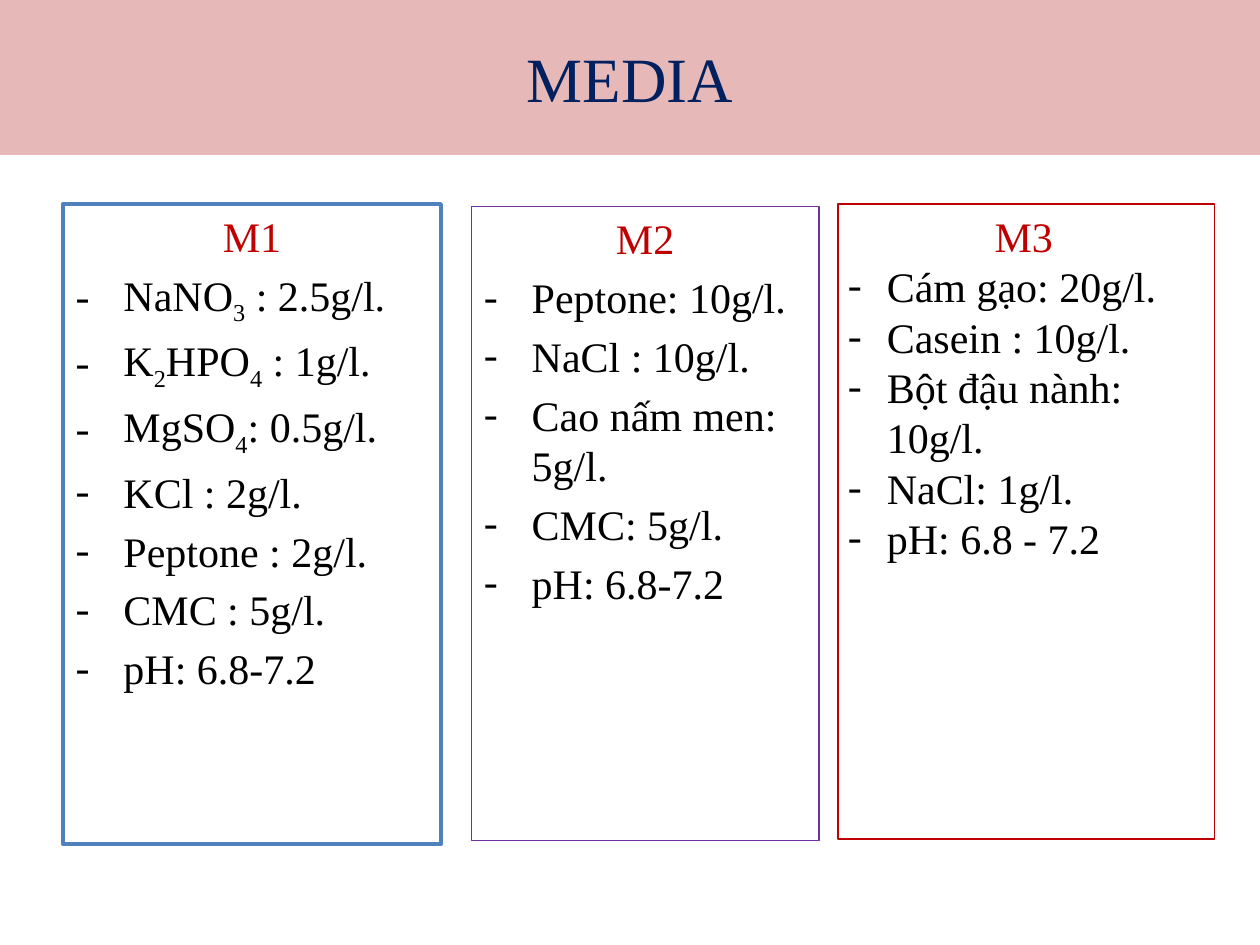
from lxml.etree import SubElement
from pptx import Presentation
from pptx.dml.color import RGBColor
from pptx.enum.shapes import MSO_SHAPE
from pptx.enum.text import MSO_ANCHOR, MSO_AUTO_SIZE, PP_ALIGN
from pptx.oxml.ns import qn
from pptx.util import Inches, Pt

FONT = "Times New Roman"
RED = "C00000"
BLACK = "000000"

# Text between underscores is subscript
M1 = ["NaNO_3_ : 2.5g/l.", "K_2_HPO_4_ : 1g/l.", "MgSO_4_: 0.5g/l.",
      "KCl : 2g/l.", "Peptone : 2g/l.", "CMC : 5g/l.", "pH: 6.8-7.2"]
M2 = ["Peptone: 10g/l.", "NaCl : 10g/l.", "Cao nấm men: 5g/l.",
      "CMC: 5g/l.", "pH: 6.8-7.2"]
M3 = ["Cám gạo: 20g/l.", "Casein : 10g/l.", "Bột đậu nành: 10g/l.",
      "NaCl: 1g/l.", "pH: 6.8 - 7.2"]


def color(hex_code):
    return RGBColor.from_string(hex_code)


def place(shape, left, top, width, height):
    shape.left, shape.top = Inches(left), Inches(top)
    shape.width, shape.height = Inches(width), Inches(height)


def outline(shape, hex_code, points):
    shape.line.color.rgb = color(hex_code)
    shape.line.width = Pt(points)


def add_runs(paragraph, text, size, hex_code):
    for position, part in enumerate(text.split("_")):
        run = paragraph.add_run()
        run.text = part
        run.font.name = FONT
        run.font.size = Pt(size)
        run.font.color.rgb = color(hex_code)
        if position % 2:
            run._r.get_or_add_rPr().set("baseline", "-25000")


def set_bullet(paragraph, indent, mark=None):
    properties = paragraph._p.get_or_add_pPr()
    properties.set("marL", str(Inches(indent)))
    properties.set("indent", str(-Inches(indent)))
    if mark:
        SubElement(properties, qn("a:buFont"), typeface=FONT)
        SubElement(properties, qn("a:buChar"), char=mark)
    else:
        SubElement(properties, qn("a:buNone"))


def fill_medium(frame, name, ingredients, indent, gap):
    frame.word_wrap = True
    frame.auto_size = MSO_AUTO_SIZE.NONE
    frame.vertical_anchor = MSO_ANCHOR.TOP
    heading = frame.paragraphs[0]
    set_bullet(heading, indent)
    heading.alignment = PP_ALIGN.CENTER
    heading.space_before = Pt(0)
    add_runs(heading, name, 24, RED)
    for ingredient in ingredients:
        line = frame.add_paragraph()
        set_bullet(line, indent, "-")
        line.alignment = PP_ALIGN.LEFT
        line.space_before = Pt(gap)
        add_runs(line, ingredient, 24, BLACK)


def add_title(slide, text):
    title = slide.shapes.title
    place(title, 0, 0, 10, 1.23)
    title.fill.solid()
    title.fill.fore_color.rgb = color("E6B9B8")
    title.text_frame.vertical_anchor = MSO_ANCHOR.MIDDLE
    heading = title.text_frame.paragraphs[0]
    heading.alignment = PP_ALIGN.CENTER
    add_runs(heading, text, 36, "002060")


def add_frame(slide, box, hex_code, points):
    frame = slide.shapes.add_shape(MSO_SHAPE.RECTANGLE, *map(Inches, box))
    frame.shadow.inherit = False
    frame.fill.background()
    outline(frame, hex_code, points)


def main():
    deck = Presentation()
    deck.slide_width, deck.slide_height = Inches(10), Inches(7.5)
    slide = deck.slides.add_slide(deck.slide_layouts[3])
    add_title(slide, "MEDIA")

    # First two media in the body placeholders
    columns = [
        (1, "M1", M1, (0.5, 1.62, 3, 5.08), "4F81BD", 2.25),
        (2, "M2", M2, (3.74, 1.64, 2.76, 5.03), "7030A0", 0.75),
    ]
    for index, name, ingredients, box, border, points in columns:
        medium = slide.placeholders[index]
        place(medium, *box)
        outline(medium, border, points)
        fill_medium(medium.text_frame, name, ingredients, 0.38, 4.8)

    # Third medium: text over its own frame
    add_frame(slide, (6.65, 1.62, 2.99, 5.04), RED, 1)
    third = slide.shapes.add_textbox(*map(Inches, (6.63, 1.62, 2.99, 2.93)))
    fill_medium(third.text_frame, "M3", M3, 0.31, 0)

    deck.save("out.pptx")


if __name__ == "__main__":
    main()
